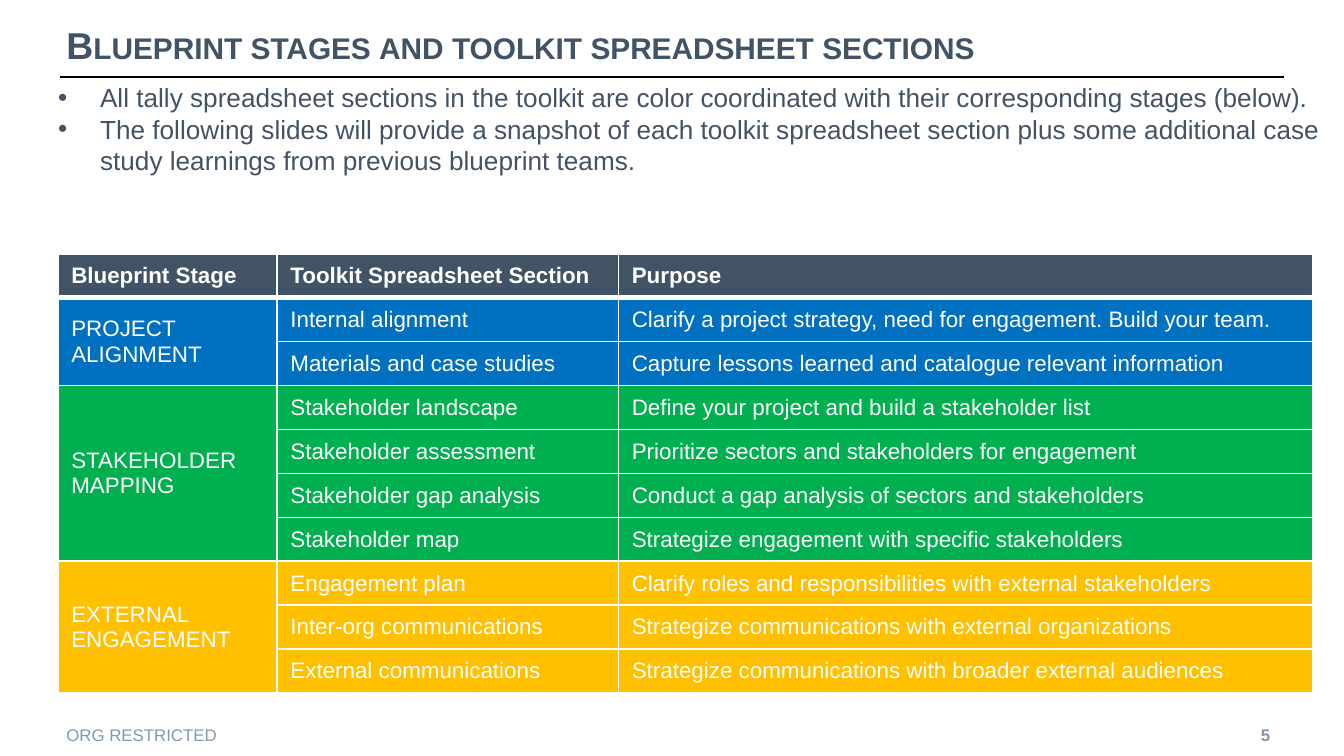
from dataclasses import dataclass

from lxml import etree
from pptx import Presentation
from pptx.dml.color import RGBColor
from pptx.enum.shapes import MSO_CONNECTOR
from pptx.enum.text import MSO_ANCHOR, PP_ALIGN
from pptx.oxml.ns import qn
from pptx.slide import Slide
from pptx.util import Pt

STRAIGHT = MSO_CONNECTOR.STRAIGHT
TOP, MIDDLE = MSO_ANCHOR.TOP, MSO_ANCHOR.MIDDLE
LEFT, RIGHT = PP_ALIGN.LEFT, PP_ALIGN.RIGHT

BLACK = RGBColor(0x00, 0x00, 0x00)
WHITE = RGBColor(0xFF, 0xFF, 0xFF)
SLATE = RGBColor(0x41, 0x53, 0x64)
MIST = RGBColor(0x82, 0x98, 0xAD)
BLUE = RGBColor(0x00, 0x70, 0xC0)
GREEN = RGBColor(0x00, 0xB0, 0x50)
AMBER = RGBColor(0xFF, 0xC0, 0x00)

BULLETS = [
    "All tally spreadsheet sections in the toolkit are color coordinated with their corresponding stages (below).",
    "The following slides will provide a snapshot of each toolkit spreadsheet section plus some additional "
    "case study learnings from previous blueprint teams.",
]
HEADINGS = ["Blueprint Stage", "Toolkit Spreadsheet Section", "Purpose"]
STAGES = [
    ("PROJECT ALIGNMENT", BLUE, [
        ("Internal alignment", "Clarify a project strategy, need for engagement. Build your team."),
        ("Materials and case studies", "Capture lessons learned and catalogue relevant information"),
    ]),
    ("STAKEHOLDER MAPPING", GREEN, [
        ("Stakeholder landscape", "Define your project and build a stakeholder list"),
        ("Stakeholder assessment", "Prioritize sectors and stakeholders for engagement"),
        ("Stakeholder gap analysis", "Conduct a gap analysis of sectors and stakeholders"),
        ("Stakeholder map", "Strategize engagement with specific stakeholders"),
    ]),
    ("EXTERNAL ENGAGEMENT", AMBER, [
        ("Engagement plan", "Clarify roles and responsibilities with external stakeholders"),
        ("Inter-org communications", "Strategize communications with external organizations"),
        ("External communications", "Strategize communications with broader external audiences"),
    ]),
]
COLUMN_WIDTHS = [117.4, 182.9, 372.2]
ROW_HEIGHT = 23.55


@dataclass
class Painter:
    page: Slide
    font: str = "Arial"

    def style(self, para, size, color, bold=False):
        para.font.name = self.font
        para.font.size = Pt(size)
        para.font.bold = bold
        para.font.color.rgb = color

    def text(self, left, top, width, height, lines, size, color, bold=False,
             align=LEFT, anchor=MIDDLE, inset=7.2, bullet_indent=0):
        box = self.page.shapes.add_textbox(Pt(left), Pt(top), Pt(width), Pt(height))
        frame = box.text_frame
        frame.word_wrap = True
        frame.vertical_anchor = anchor
        frame.margin_left = frame.margin_right = Pt(inset)
        frame.margin_top = frame.margin_bottom = Pt(3.6)
        frame.text = "\n".join(lines)
        for para in frame.paragraphs:
            para.alignment = align
            if bullet_indent:
                self.bullet(para, bullet_indent)
            self.style(para, size, color, bold)
        return frame

    def bullet(self, para, indent):
        properties = para._p.get_or_add_pPr()
        properties.set("marL", str(Pt(indent)))
        properties.set("indent", str(-Pt(indent)))
        etree.SubElement(properties, qn("a:buFont"), typeface=self.font)
        etree.SubElement(properties, qn("a:buChar"), char="•")

    def title(self, left, top, width, height, wording):
        frame = self.text(left, top, width, height, [wording], 20, SLATE, bold=True, inset=3.6)
        span = frame.paragraphs[0].runs[0]
        span._r.get_or_add_rPr().set("cap", "small")

    def rule(self, left, right, y):
        line = self.page.shapes.add_connector(STRAIGHT, Pt(left), Pt(y), Pt(right), Pt(y))
        line.line.color.rgb = BLACK
        line.line.width = Pt(0.75)
        etree.SubElement(line._element.spPr, qn("a:effectLst"))

    def cell(self, cell, wording, fill, top_line=1, bottom_line=1, bold=False):
        properties = cell._tc.get_or_add_tcPr()
        for side, width in (("L", 1), ("R", 1), ("T", top_line), ("B", bottom_line)):
            border = etree.SubElement(properties, qn(f"a:ln{side}"), w=str(Pt(width)))
            solid = etree.SubElement(border, qn("a:solidFill"))
            etree.SubElement(solid, qn("a:srgbClr"), val=str(WHITE))
        cell.fill.solid()
        cell.fill.fore_color.rgb = fill
        cell.vertical_anchor = MIDDLE
        cell.text = wording
        self.style(cell.text_frame.paragraphs[0], 12, WHITE, bold)

    def stage_table(self, left, top):
        row_count = 1 + sum(len(sections) for _, _, sections in STAGES)
        frame = self.page.shapes.add_table(
            row_count, len(HEADINGS), Pt(left), Pt(top),
            Pt(sum(COLUMN_WIDTHS)), Pt(ROW_HEIGHT * row_count))
        table = frame.table
        table.horz_banding = False
        for column, width in zip(table.columns, COLUMN_WIDTHS):
            column.width = Pt(width)
        for row in table.rows:
            row.height = Pt(ROW_HEIGHT)
        for index, heading in enumerate(HEADINGS):
            self.cell(table.cell(0, index), heading, SLATE, bottom_line=3, bold=True)
        first = 1
        for stage, color, sections in STAGES:
            for offset, section in enumerate(sections):
                wordings = (stage if offset == 0 else "", *section)
                for index, wording in enumerate(wordings):
                    self.cell(table.cell(first + offset, index), wording, color,
                              top_line=3 if first + offset == 1 else 1)
            last = first + len(sections) - 1
            table.cell(first, 0).merge(table.cell(last, 0))
            first = last + 1


def main():
    deck = Presentation()
    deck.slide_width, deck.slide_height = Pt(720), Pt(405)
    painter = Painter(deck.slides.add_slide(deck.slide_layouts[6]))
    painter.rule(32, 688, 41.3)
    painter.title(32, 7.2, 688, 33, "Blueprint stages and toolkit spreadsheet sections")
    painter.text(651, 383, 36.5, 21.6, ["5"], 9, MIST, bold=True, align=RIGHT)
    painter.text(32, 383, 238, 21.6, ["ORG RESTRICTED"], 9, MIST, inset=3.6)
    painter.stage_table(31, 136)
    painter.text(24, 40.3, 696, 58.3, BULLETS, 14, SLATE, anchor=TOP, bullet_indent=22.5)
    deck.save("out.pptx")


if __name__ == "__main__":
    main()
